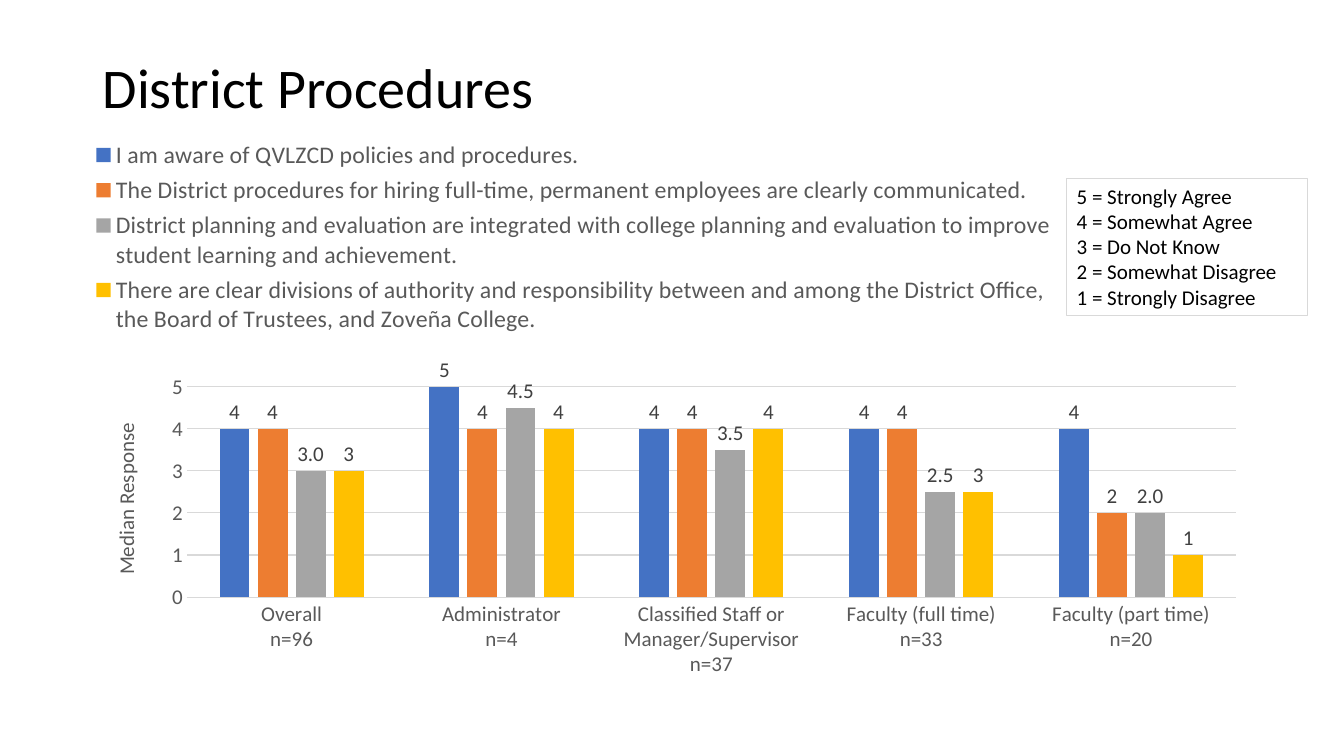
from lxml.etree import SubElement
from pptx import Presentation
from pptx.chart.data import CategoryChartData
from pptx.dml.color import RGBColor
from pptx.enum.chart import (XL_CHART_TYPE, XL_LABEL_POSITION,
                             XL_LEGEND_POSITION, XL_TICK_MARK)
from pptx.enum.shapes import MSO_SHAPE
from pptx.enum.text import MSO_ANCHOR, PP_ALIGN
from pptx.oxml.ns import qn
from pptx.util import Inches, Pt

FACE = "Calibri"
BLACK = RGBColor(0x00, 0x00, 0x00)
DARK = RGBColor(0x40, 0x40, 0x40)
GREY = RGBColor(0x59, 0x59, 0x59)
PALE = RGBColor(0xD9, 0xD9, 0xD9)
BLUE = RGBColor(0x44, 0x72, 0xC4)
ORANGE = RGBColor(0xED, 0x7D, 0x31)
SILVER = RGBColor(0xA5, 0xA5, 0xA5)
GOLD = RGBColor(0xFF, 0xC0, 0x00)

GROUPS = ["Overall\nn=96", "Administrator\nn=4",
          "Classified Staff or Manager/Supervisor\nn=37",
          "Faculty (full time)\nn=33", "Faculty (part time)\nn=20"]
# statement, medians, colour, label format
SERIES = [
    ("I am aware of QVLZCD policies and procedures.",
     (4, 5, 4, 4, 4), BLUE, "0"),
    ("The District procedures for hiring full-time, permanent employees "
     "are clearly communicated.",
     (4, 4, 4, 4, 2), ORANGE, "0"),
    ("District planning and evaluation are integrated with college planning "
     "and evaluation to improve student learning and achievement.",
     (3, 4.5, 3.5, 2.5, 2), SILVER, "0.0"),
    ("There are clear divisions of authority and responsibility between and "
     "among the District Office, the Board of Trustees, and Zoveña College.",
     (3, 4, 4, 2.5, 1), GOLD, "0"),
]
SCALE = ["5 = Strongly Agree", "4 = Somewhat Agree", "3 = Do Not Know",
         "2 = Somewhat Disagree", "1 = Strongly Disagree"]


def apply(obj, **values):
    for name, value in values.items():
        setattr(obj, name, value)


def style(font, size, color):
    apply(font, name=FACE, size=Pt(size), bold=False)
    font.color.rgb = color


def outline(line):
    line.color.rgb = PALE
    line.width = Pt(0.75)


def pin(node, index, **spots):
    """Give a chart part a manual layout in fractions of the chart."""
    for old in node.findall(qn("c:layout")):
        node.remove(old)
    layout = SubElement(node, qn("c:layout"))
    node.insert(index, layout)
    manual = SubElement(layout, qn("c:manualLayout"))
    if node.tag == qn("c:plotArea"):
        SubElement(manual, qn("c:layoutTarget")).set("val", "inner")
    for axis in "xy":
        SubElement(manual, qn(f"c:{axis}Mode")).set("val", "edge")
    for key, value in spots.items():
        SubElement(manual, qn(f"c:{key}")).set("val", str(value))


def add_title(slide, box):
    frame = slide.shapes.add_textbox(*box).text_frame
    apply(frame, word_wrap=True, vertical_anchor=MSO_ANCHOR.MIDDLE)
    para = frame.paragraphs[0]
    apply(para, text="District Procedures", line_spacing=0.9)
    style(para.font, 40, BLACK)


def style_axes(chart):
    cat, val = chart.category_axis, chart.value_axis
    for axis in (cat, val):
        apply(axis, major_tick_mark=XL_TICK_MARK.NONE,
              minor_tick_mark=XL_TICK_MARK.NONE)
        style(axis.tick_labels.font, 15, GREY)
    outline(cat.format.line)
    apply(val, minimum_scale=0, maximum_scale=5, major_unit=1,
          has_major_gridlines=True)
    val.format.line.fill.background()
    outline(val.major_gridlines.format.line)
    apply(val.tick_labels, number_format="0", number_format_is_linked=False)
    title = val.axis_title
    para = title.text_frame.paragraphs[0]
    para.text = "Median Response"
    style(para.runs[0].font, 15, GREY)
    pin(title._element, 1, x=0.013, y=0.514)


def add_medians(slide, box):
    data = CategoryChartData()
    data.categories = GROUPS
    for name, medians, _, _ in SERIES:
        data.add_series(name, medians)
    chart = slide.shapes.add_chart(
        XL_CHART_TYPE.COLUMN_CLUSTERED, *box, data).chart
    style(chart.font, 10, BLACK)
    apply(chart, has_title=False, has_legend=True)
    apply(chart.legend, position=XL_LEGEND_POSITION.TOP,
          include_in_layout=False)
    style(chart.legend.font, 17, GREY)
    plot = chart.plots[0]
    apply(plot, gap_width=219, overlap=-27, vary_by_categories=False)
    for series, (_, _, color, code) in zip(plot.series, SERIES):
        series.format.fill.solid()
        series.format.fill.fore_color.rgb = color
        series.invert_if_negative = False
        labels = series.data_labels
        apply(labels, show_value=True, number_format=code,
              number_format_is_linked=False,
              position=XL_LABEL_POSITION.OUTSIDE_END)
        style(labels.font, 15, DARK)
    style_axes(chart)
    area = chart._chartSpace.chart.plotArea
    pin(area, 0, x=0.081, y=0.457, w=0.905, h=0.369)
    pin(chart.legend._element, 1, x=0, y=0.015, w=0.83, h=0.36)


def add_scale(slide, box):
    key = slide.shapes.add_shape(MSO_SHAPE.RECTANGLE, *box)
    key.shadow.inherit = False
    key.fill.background()
    outline(key.line)
    frame = key.text_frame
    apply(frame, word_wrap=True, vertical_anchor=MSO_ANCHOR.TOP)
    frame.text = "\n".join(SCALE)
    for para in frame.paragraphs:
        para.alignment = PP_ALIGN.LEFT
        style(para.font, 15, BLACK)


def inches(*box):
    return [Inches(side) for side in box]


def main():
    deck = Presentation()
    apply(deck, slide_width=Inches(13.33), slide_height=Inches(7.5))
    slide = deck.slides.add_slide(deck.slide_layouts[6])
    add_title(slide, inches(0.92, 0.4, 11.5, 1))
    add_medians(slide, inches(0.92, 1.25, 11.5, 5.66))
    add_scale(slide, inches(10.58, 1.77, 2.39, 1.36))
    deck.save("out.pptx")


if __name__ == "__main__":
    main()
